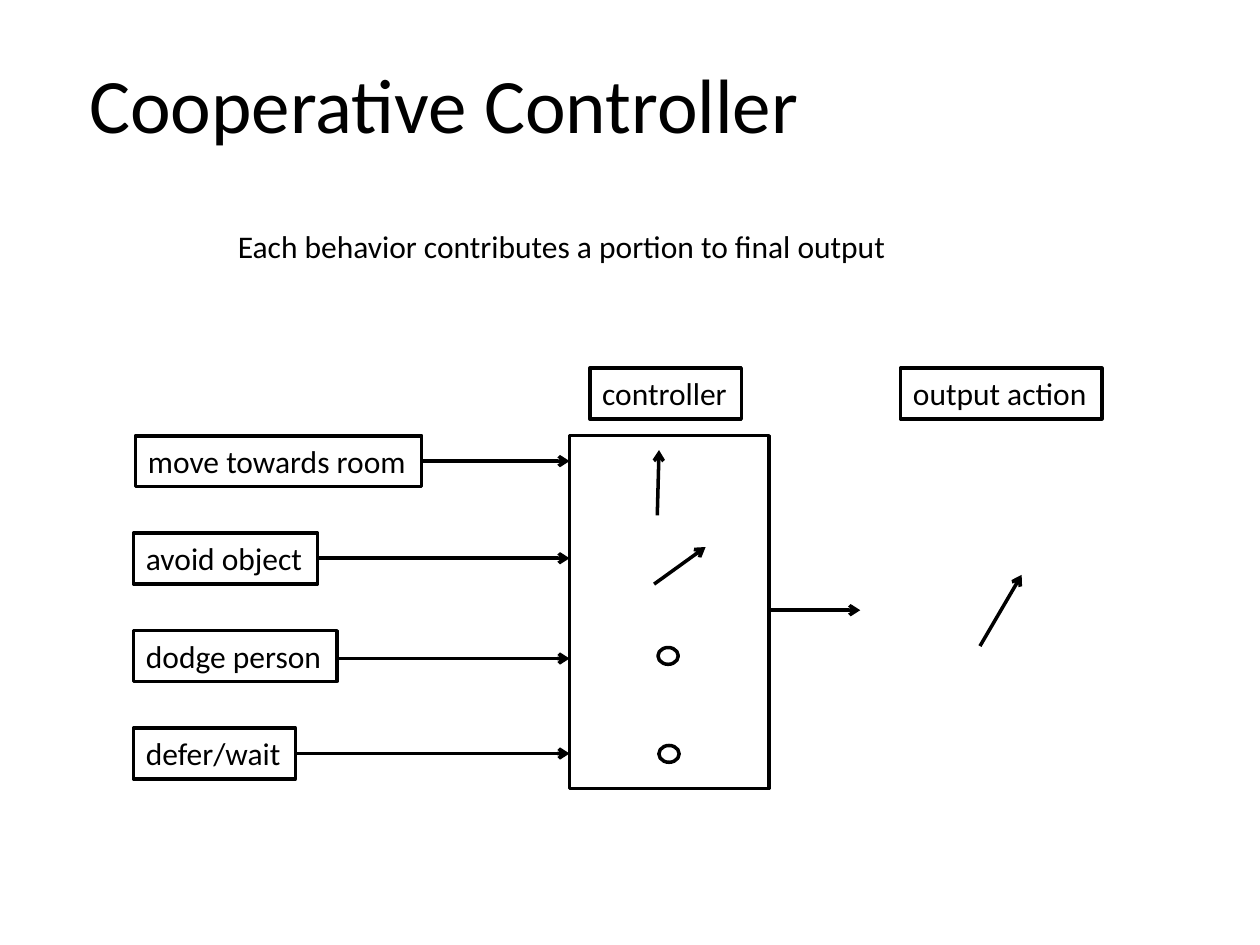
from lxml import etree
from pptx import Presentation
from pptx import util as u
from pptx.dml.color import RGBColor
from pptx.enum import shapes, text
from pptx.oxml.ns import qn

INK = "000000"
GRID = {"top": 249, "pitch": 55.7, "high": 29}
WALL = 325.5


def paint(target, code):
    """Give a colour format a hex colour."""
    target.rgb = RGBColor.from_string(code)


def stroke(line):
    """Draw a line in the common ink and width."""
    line.fill.solid()
    paint(line.fill.fore_color, INK)
    line.width = u.Pt(2)


def write(shape, words, size=18, wrap=False):
    """Put one left-aligned paragraph into a shape."""
    frame = shape.text_frame
    look = {"word_wrap": wrap, "auto_size": text.MSO_AUTO_SIZE.SHAPE_TO_FIT_TEXT,
            "vertical_anchor": text.MSO_ANCHOR.TOP}
    for key, value in look.items():
        setattr(frame, key, value)
    para = frame.paragraphs[0]
    para.alignment = text.PP_ALIGN.LEFT
    run = para.add_run()
    for key, value in {"name": "Calibri", "size": u.Pt(size)}.items():
        setattr(run.font, key, value)
    run.text = words
    paint(run.font.color, INK)


def label(slide, words, place, size=18, wrap=False):
    """Add plain text without a frame."""
    write(slide.shapes.add_textbox(*map(u.Pt, place)), words, size, wrap)


def outline(slide, place, words="", kind="RECTANGLE"):
    """Add an unfilled shape, with text if given."""
    shape = slide.shapes.add_shape(shapes.MSO_SHAPE[kind], *map(u.Pt, place))
    shape.shadow.inherit = False
    shape.fill.background()
    stroke(shape.line)
    if words:
        write(shape, words)


def arrow(slide, *ends):
    """Add an arrow from the first point to the second."""
    link = slide.shapes.add_connector(shapes.MSO_CONNECTOR.STRAIGHT, *map(u.Pt, ends))
    stroke(link.line)
    etree.SubElement(link.line._get_or_add_ln(), qn("a:tailEnd"), type="arrow")
    etree.SubElement(link._element.spPr, qn("a:effectLst"))


def inputs(slide):
    """Add the behaviors and their arrows to the controller."""
    rows = [("move towards room", 77.5, 163.5, 263.5),
            ("avoid object", 76.3, 105.2, 319),
            ("dodge person", 76.3, 116.2, 376.3),
            ("defer/wait", 76.3, 92.5, 430.6)]
    for row, (words, left, wide, level) in enumerate(rows):
        top = GRID["top"] + row * GRID["pitch"]
        outline(slide, (left, top, wide, GRID["high"]), words)
        arrow(slide, left + wide, level, WALL, level)


def main():
    """Build the slide and save it."""
    deck = Presentation()
    deck.slide_width, deck.slide_height = u.Pt(720), u.Pt(540)
    slide = deck.slides.add_slide(deck.slide_layouts[6])
    label(slide, "Cooperative Controller", (44, 28.8, 424.8, 60.6), 44)
    label(slide, "Each behavior contributes a portion to final output",
          (128.8, 126.2, 439.2, 29), wrap=True)
    for words, left, wide in (("controller", 337, 86.6), ("output action", 514.6, 115)):
        outline(slide, (left, 210.4, wide, GRID["high"]), words)
    inputs(slide)
    outline(slide, (WALL, GRID["top"], 113.8, 201.6))
    for left, top in ((376, 370), (376.5, 426)):
        outline(slide, (left, top, 11.6, 9.6), kind="OVAL")
    for ends in ((375.6, 294.5, 376.6, 257.2), (373.8, 333.8, 403.2, 312.6),
                 (439.3, 348.7, 491.6, 348.7), (560, 369.2, 583.8, 328.5)):
        arrow(slide, *ends)
    deck.save("out.pptx")


if __name__ == "__main__":
    main()
